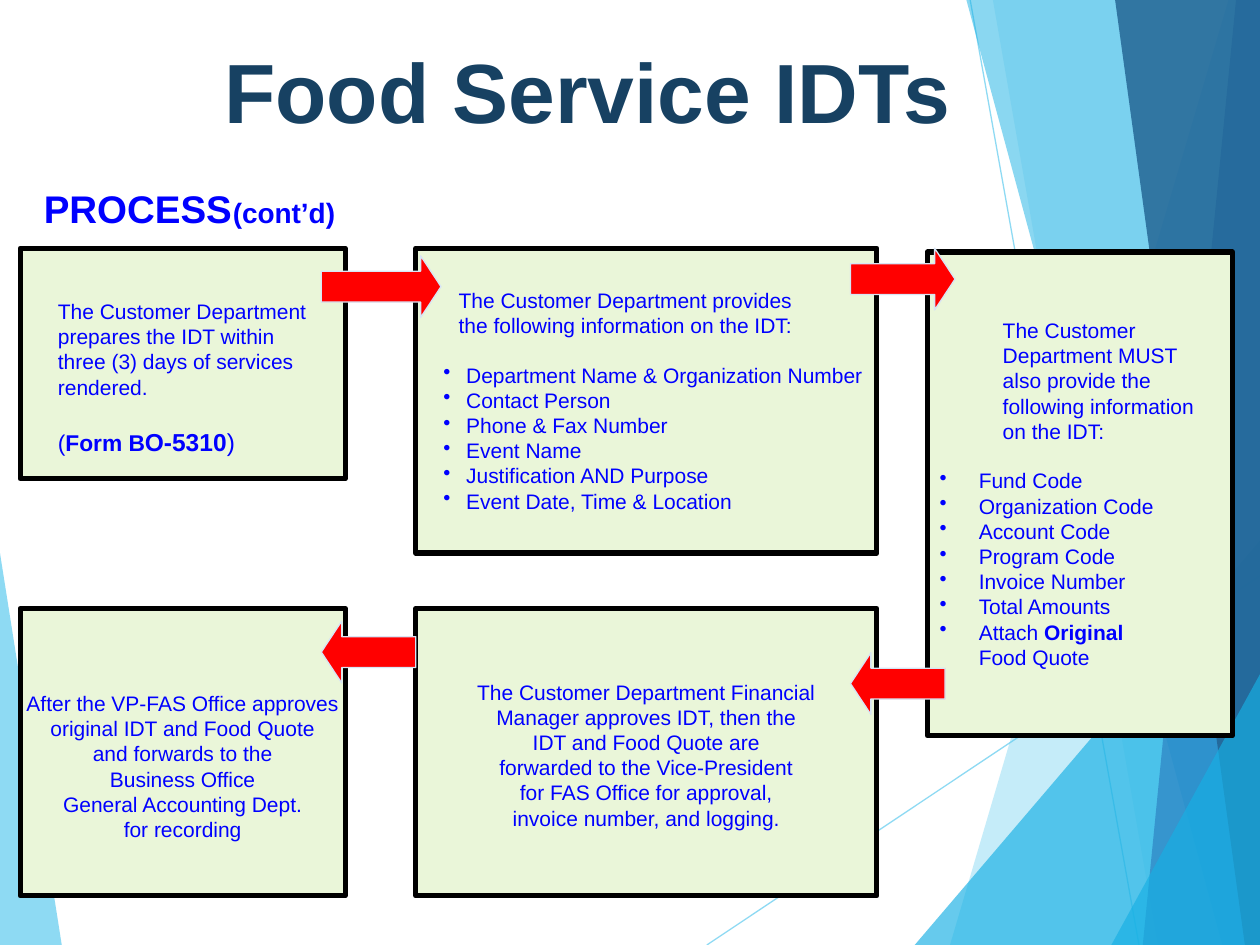
"""Builds the Food Service IDTs process slide."""
from lxml.etree import SubElement
from pptx import Presentation
from pptx.dml.color import RGBColor
from pptx.enum.shapes import MSO_CONNECTOR, MSO_SHAPE
from pptx.enum.text import MSO_ANCHOR, PP_ALIGN
from pptx.oxml.ns import qn
from pptx.util import Inches, Pt

NAVY = RGBColor(0x17, 0x41, 0x62)
BLUE = RGBColor(0x00, 0x00, 0xFF)
GREEN = RGBColor(0xEA, 0xF6, 0xD9)
BLACK = RGBColor(0x00, 0x00, 0x00)
RED = RGBColor(0xFF, 0x00, 0x00)
PALE = RGBColor(0xD7, 0xE5, 0xF5)
SKY = RGBColor(0x5F, 0xCB, 0xEF)
AQUA = RGBColor(0x17, 0xB0, 0xE4)
AZURE = RGBColor(0x2E, 0x83, 0xC3)
STEEL = RGBColor(0x22, 0x62, 0x92)
COLS, ROWS = 100, 75
LEFT, MID = PP_ALIGN.LEFT, PP_ALIGN.CENTER


class Deck:
    """Holds the style and the current slide."""

    def __init__(self):
        self.show = Presentation()
        self.show.slide_width, self.show.slide_height = Inches(10), Inches(7.5)
        self.slide = self.show.slides.add_slide(self.show.slide_layouts[6])
        self.shapes = self.slide.shapes
        self.face = "Arial"

    def x(self, col):
        return round(self.show.slide_width * col / COLS)

    def y(self, row):
        return round(self.show.slide_height * row / ROWS)

    def area(self, left, top, width, height):
        return self.x(left), self.y(top), self.x(width), self.y(height)

    def fade(self, shape, share):
        for color in shape.element.spPr.iter(qn("a:srgbClr")):
            SubElement(color, qn("a:alpha"), val=str(share * 1000))

    def facet(self, points, color, share):
        spots = [(self.x(col), self.y(row)) for col, row in points]
        pen = self.shapes.build_freeform(*spots[0], scale=1.0)
        pen.add_line_segments(spots[1:], close=True)
        shape = pen.convert_to_shape()
        shape.shadow.inherit = False
        shape.fill.solid()
        shape.fill.fore_color.rgb = color
        shape.line.fill.background()
        self.fade(shape, share)

    def ray(self, start, end):
        line = self.shapes.add_connector(
            MSO_CONNECTOR.STRAIGHT, self.x(start[0]), self.y(start[1]), self.x(end[0]), self.y(end[1]))
        line.line.color.rgb = SKY
        line.line.width = Pt(0.75)
        self.fade(line, 70)
        SubElement(line.element.spPr, qn("a:effectLst"))

    def solid(self, kind, area, fill, edge, width):
        shape = self.shapes.add_shape(kind, *self.area(*area))
        shape.shadow.inherit = False
        shape.fill.solid()
        shape.fill.fore_color.rgb = fill
        shape.line.color.rgb = edge
        shape.line.width = Pt(width)
        return shape

    def arrow(self, area, turn=0):
        shape = self.solid(MSO_SHAPE.RIGHT_ARROW, area, RED, PALE, 0.75)
        shape.adjustments[0], shape.adjustments[1] = 0.5, 0.33
        shape.rotation = turn

    def prose(self, frame, lines, size=12, color=BLUE, bold=False, align=LEFT,
              inset=0, hang=0, dot=False, tab=0, gap=0):
        for order, line in enumerate(lines):
            para = frame.paragraphs[0]
            if para.runs:
                para = frame.add_paragraph()
            props = para._p.get_or_add_pPr()
            props.set("marL", str(self.x(inset)))
            props.set("indent", str(-self.x(hang)))
            if dot:
                SubElement(props, qn("a:buChar"), char="•")
            if tab:
                tabs = SubElement(props, qn("a:tabLst"))
                SubElement(tabs, qn("a:tab"), pos=str(self.x(tab)), algn="l")
            para.alignment = align
            para.space_before = Pt(0 if order else gap)
            font = para.font
            font.name, font.size, font.bold = self.face, Pt(size), bold
            font.color.rgb = color
            for part in [(line,)] if isinstance(line, str) else line:
                run = para.add_run()
                run.text = part[0]
                if len(part) > 1:
                    run.font.size, run.font.bold = Pt(part[1]), part[2]

    def box(self, area, side, head):
        shape = self.solid(MSO_SHAPE.RECTANGLE, area, GREEN, BLACK, 3)
        frame = shape.text_frame
        frame.word_wrap = True
        frame.vertical_anchor = MSO_ANCHOR.TOP
        frame.margin_left, frame.margin_top = self.x(side), self.y(head)
        frame.margin_right = frame.margin_bottom = 0
        return frame

    def label(self, area, lines, **style):
        frame = self.shapes.add_textbox(*self.area(*area)).text_frame
        frame.word_wrap = True
        frame.vertical_anchor = MSO_ANCHOR.MIDDLE
        self.prose(frame, lines, bold=True, **style)

    def scene(self):
        self.facet([(0, 43.9), (4.9, 75), (0, 75)], SKY, 70)
        self.ray((56.1, 75), (100, 45.7))
        self.ray((77, 0), (90.4, 75))
        for top, foot, rise, color, share in (
                (97.5, 75.4, 0, SKY, 36), (78.8, 91.9, 0, SKY, 20),
                (100, 72.6, 42.9, AQUA, 66), (76.7, 97, 0, AQUA, 50),
                (98.1, 90.7, 0, AZURE, 70), (88.5, 98.8, 0, STEEL, 82),
                (100, 88.2, 53.5, AQUA, 66)):
            self.facet([(top, rise), (foot, 75), (100, 75), (100, rise)], color, share)

    def flow(self):
        frame = self.box((33, 19.7, 36.6, 24.2), 2.2, 3.1)
        self.prose(frame, ["The Customer Department provides", "the following information on the IDT:"], inset=1.2)
        self.prose(frame, ["Department Name & Organization Number", "Contact Person", "Phone & Fax Number",
                           "Event Name", "Justification AND Purpose", "Event Date, Time & Location"],
                   inset=1.8, hang=1.8, dot=True, gap=14)

        frame = self.box((1.6, 19.7, 25.8, 18.3), 3, 4)
        self.prose(frame, ["The Customer Department", "prepares the IDT within",
                           "three (3) days of services", "rendered."])
        self.prose(frame, [[("(", 13, False), ("Form B", 13, True), ("O-5310", 14, True), (")", 14, False)]], gap=16)

        frame = self.box((73.6, 20, 24.2, 38.4), 1, 5.2)
        self.prose(frame, ["The Customer", "Department MUST", "also provide the",
                           "following information", "on the IDT:"], inset=5)
        self.prose(frame, ["Fund Code", "Organization Code", "Account Code", "Program Code", "Invoice Number",
                           "Total Amounts", [("Attach ",), ("Original", 12, True)]],
                   inset=3.1, hang=3.1, dot=True, gap=14)
        self.prose(frame, ["Food Quote"], inset=3.1)

        frame = self.box((1.6, 48.3, 25.8, 22.8), 0, 6.5)
        self.prose(frame, ["After the VP-FAS Office approves", "original IDT and Food Quote",
                           "and forwards to the", "Business Office", "General Accounting Dept.",
                           "for recording"], align=MID)

        frame = self.box((33, 48.3, 36.6, 22.8), 0, 5.6)
        self.prose(frame, ["The Customer Department Financial", "Manager approves IDT, then the",
                           "IDT and Food Quote are", "forwarded to the Vice-President",
                           "for FAS Office for approval,", "invoice number, and logging."], align=MID)

        self.arrow((25.5, 20.3, 9.5, 4.9))
        self.arrow((67.5, 19.7, 8.3, 4.9))
        self.arrow((67.5, 51.8, 7.5, 4.9), 180)
        self.arrow((25.5, 49.3, 7.5, 4.9), 180)


def main():
    deck = Deck()
    deck.scene()
    deck.label((0, 1.7, 93.3, 10.9), ["Food Service IDTs"], size=48, color=NAVY, align=MID)
    deck.label((2.5, 14.2, 90, 4.7), [[("PROCESS\t",), ("(cont’d)", 16, True)]], size=22, tab=16.6)
    deck.flow()
    deck.show.save("out.pptx")


if __name__ == "__main__":
    main()
